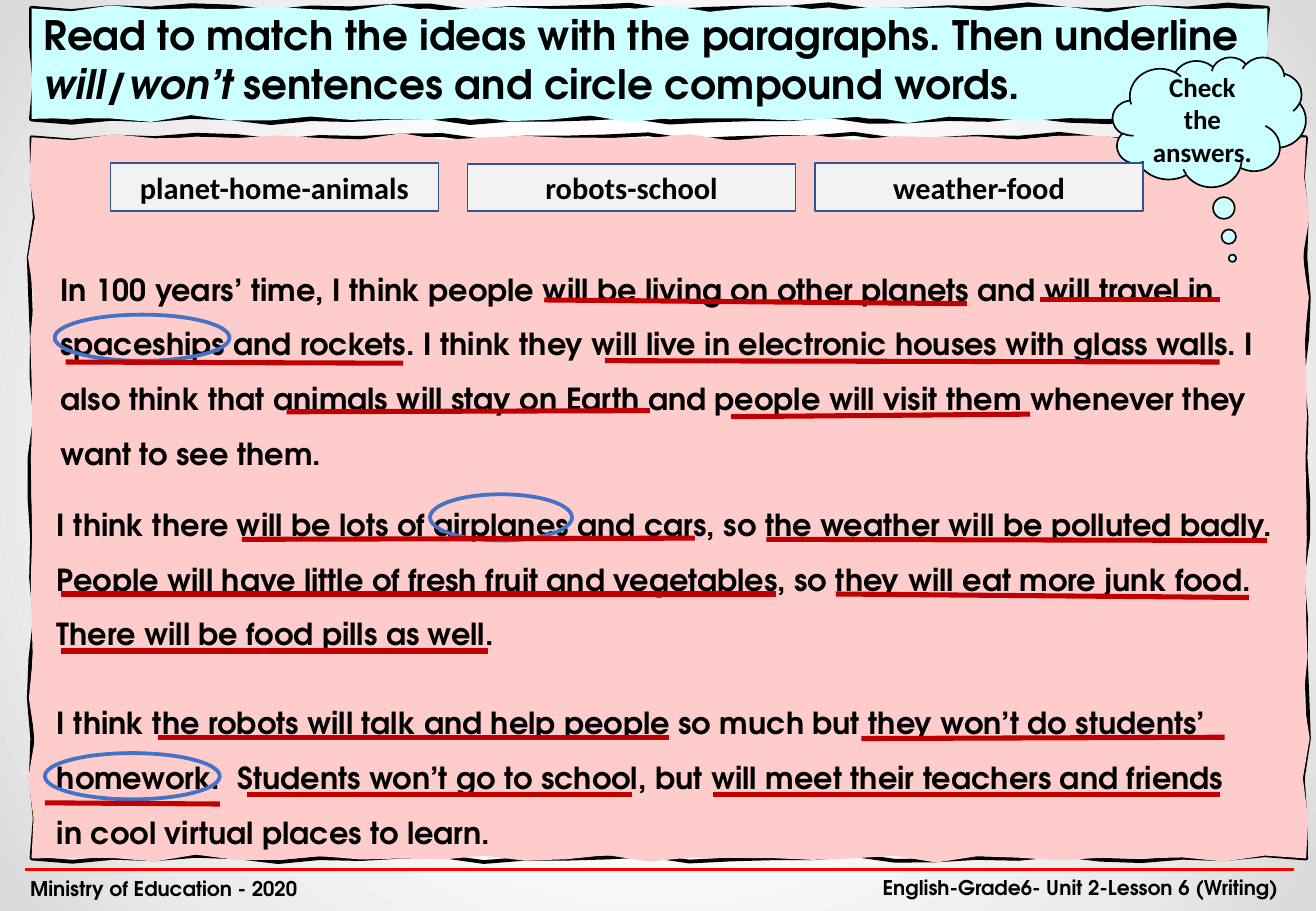
from dataclasses import dataclass
from itertools import pairwise
from math import hypot, pi, sin

from lxml.etree import SubElement
from pptx import Presentation
from pptx.dml.color import RGBColor
from pptx.enum.shapes import MSO_CONNECTOR, MSO_SHAPE
from pptx.enum.text import MSO_ANCHOR, PP_ALIGN
from pptx.oxml import parse_xml
from pptx.oxml.ns import nsdecls, qn
from pptx.util import Pt

COLORS = {
    "ink": "000000", "panel": "FFCCCC", "header": "CCFFFF", "label": "F2F2F2",
    "label_edge": "325491", "circle": "4472C4", "underline": "C00000", "rule": "FF0000",
}
BACKDROP = ((0, "F2F2F2"), (39, "FFFFFF"), (78, "ECECEC"), (100, "D9D9D9"))
BODY_FONT = "TeX Gyre Adventor"
LABEL_FONT = "Calibri"


@dataclass(frozen=True)
class Box:
    x: float
    y: float
    w: float
    h: float

    def emu(self):
        return Pt(self.x), Pt(self.y), Pt(self.w), Pt(self.h)


@dataclass(frozen=True)
class Stroke:
    x1: float
    y1: float
    x2: float
    y2: float


@dataclass(frozen=True)
class Passage:
    box: Box
    text: str


PANEL = Box(18.7, 81.4, 755.5, 427.5)
HEADER = Box(18.7, 5, 732.5, 65.5)
PASSAGES = (
    Passage(Box(28.8, 146.2, 722.2, 138.2),
            "In 100 years’ time, I think people will be living on other planets and will travel in "
            "spaceships and rockets. I think they will live in electronic houses with glass walls. "
            "I also think that animals will stay on Earth and people will visit them whenever they "
            "want to see them."),
    Passage(Box(26.6, 285.8, 740.2, 105.1),
            "I think there will be lots of airplanes and cars, so the weather will be polluted "
            "badly. People will have little of fresh fruit and vegetables, so they will eat more "
            "junk food. There will be food pills as well."),
    Passage(Box(26.6, 403.2, 713.5, 105.1),
            "I think the robots will talk and help people so much but they won’t do students’ "
            "homework.  Students won’t go to school, but will meet their teachers and friends in "
            "cool virtual places to learn."),
)
CIRCLES = (Box(32.4, 186.5, 103.7, 27.4), Box(254.9, 293, 84.2, 27.4), Box(26.6, 446.4, 103.7, 27.4))
UNDERLINES = (
    Stroke(322.6, 177.8, 573.1, 180), Stroke(616.3, 177.8, 722.9, 177.8),
    Stroke(38.9, 214.6, 239, 215.3), Stroke(358.6, 213.8, 722.9, 214.6),
    Stroke(169.9, 244.1, 385.2, 243.4), Stroke(433.4, 247, 610.6, 245.5),
    Stroke(143.3, 319.7, 411.8, 319), Stroke(454.3, 319.7, 751, 320.4),
    Stroke(36, 352.1, 460.1, 352.1), Stroke(495.4, 352.1, 740.2, 354.2),
    Stroke(36, 385.9, 289.4, 385.9),
    Stroke(93.6, 437, 396.7, 437), Stroke(510.5, 437.8, 725.8, 437),
    Stroke(26.6, 475.9, 130.3, 476.6), Stroke(146.2, 470.9, 374.4, 470.9),
    Stroke(422.6, 470.9, 722.9, 470.9),
)
LABELS = (
    Passage(Box(65.5, 96.5, 194.4, 28.8), "planet-home-animals"),
    Passage(Box(277.2, 97.2, 194.4, 28.1), "robots-school"),
    Passage(Box(483.1, 96.5, 194.4, 28.8), "weather-food"),
)


def rgb(name: str) -> RGBColor:
    return RGBColor.from_string(COLORS[name])


def paint(sp, fill: str | None = None, line: str | None = None, width: float = 1) -> None:
    sp.shadow.inherit = False
    if fill:
        sp.fill.solid()
        sp.fill.fore_color.rgb = rgb(fill)
    else:
        sp.fill.background()
    if line:
        sp.line.color.rgb = rgb(line)
        sp.line.width = Pt(width)
    else:
        sp.line.fill.background()


def write(sp, *runs: str, size: float, font: str = BODY_FONT, align=PP_ALIGN.LEFT,
          anchor=MSO_ANCHOR.TOP, spacing: float = 1, wrap: bool = True,
          italic_run: int | None = None) -> None:
    tf = sp.text_frame
    tf.word_wrap = wrap
    tf.vertical_anchor = anchor
    p = tf.paragraphs[0]
    p.alignment = align
    p.line_spacing = spacing
    for i, text in enumerate(runs):
        r = p.add_run()
        r.text = text
        r.font.name = font
        r.font.size = Pt(size)
        r.font.bold = True
        r.font.italic = i == italic_run
        r.font.color.rgb = rgb("ink")


def add_text(slide, box: Box, text: str, **fmt) -> None:
    write(slide.shapes.add_textbox(*box.emu()), text, **fmt)


def add_line(slide, s: Stroke, color: str, width: float) -> None:
    ends = (Pt(v) for v in (s.x1, s.y1, s.x2, s.y2))
    cxn = slide.shapes.add_connector(MSO_CONNECTOR.STRAIGHT, *ends)
    cxn.line.color.rgb = rgb(color)
    cxn.line.width = Pt(width)
    SubElement(cxn._element.spPr, qn("a:effectLst"))


def add_shape(slide, kind, box: Box, **look):
    sp = slide.shapes.add_shape(kind, *box.emu())
    paint(sp, **look)
    return sp


def wavy_points(box: Box, shift: int, sway: float = 1.2, step: float = 24) -> list[tuple[int, int]]:
    right, bottom = box.x + box.w, box.y + box.h
    corners = ((box.x, box.y), (right, box.y), (right, bottom), (box.x, bottom), (box.x, box.y))
    points = []
    for (x1, y1), (x2, y2) in pairwise(corners):
        length = hypot(x2 - x1, y2 - y1)
        waves, steps = round(length / 31) + shift, round(length / step)
        for i in range(steps):
            u = i / steps
            off = sway * (sin(waves * pi * u) + sin((waves // 2 + 3 * shift) * pi * u))
            x = x1 + (x2 - x1) * u - (y2 - y1) / length * off
            y = y1 + (y2 - y1) * u + (x2 - x1) / length * off
            points.append((Pt(x), Pt(y)))
    return points


def add_wavy_panel(slide, box: Box, fill: str, width: float):
    for shift, look in ((0, {"line": "ink", "width": width}), (2, {"fill": fill})):
        first, *rest = wavy_points(box, shift)
        builder = slide.shapes.build_freeform(*first, scale=1.0)
        builder.add_line_segments(rest, close=True)
        sp = builder.convert_to_shape()
        paint(sp, **look)
    return sp


def set_backdrop(slide) -> None:
    slide.background.fill.gradient()
    old = slide.element.find(".//" + qn("a:gradFill"))
    stops = "".join(f'<a:gs pos="{pos * 1000}"><a:srgbClr val="{c}"/></a:gs>' for pos, c in BACKDROP)
    old.getparent().replace(old, parse_xml(
        f'<a:gradFill {nsdecls("a")} rotWithShape="1"><a:gsLst>{stops}</a:gsLst><a:path path="circle">'
        '<a:fillToRect l="50000" t="50000" r="50000" b="50000"/></a:path></a:gradFill>'))


def main() -> None:
    prs = Presentation()
    prs.slide_width, prs.slide_height = Pt(780), Pt(540)
    slide = prs.slides.add_slide(prs.slide_layouts[6])
    set_backdrop(slide)
    add_line(slide, Stroke(15.1, 515.5, 766.8, 515.5), "rule", 1.5)
    add_wavy_panel(slide, PANEL, "panel", 2.25)
    for passage in PASSAGES:
        add_text(slide, passage.box, passage.text, size=18, spacing=1.5)
    header = add_wavy_panel(slide, HEADER, "header", 3)
    write(header, "Read to match the ideas with the paragraphs. Then underline ", "will/won’t",
          " sentences and circle compound words.", size=24, italic_run=1)
    for box in CIRCLES:
        add_shape(slide, MSO_SHAPE.OVAL, box, line="circle", width=2.25)
    centred = {"font": LABEL_FONT, "align": PP_ALIGN.CENTER, "anchor": MSO_ANCHOR.MIDDLE}
    cloud = add_shape(slide, MSO_SHAPE.CLOUD_CALLOUT, Box(659.5, 33.8, 114.5, 77),
                      fill="header", line="ink")
    cloud.adjustments[0], cloud.adjustments[1] = 0.12, 1.05
    write(cloud, "Check the answers.", size=16, **centred)
    for stroke in UNDERLINES:
        add_line(slide, stroke, "underline", 3)
    for label in LABELS:
        sp = add_shape(slide, MSO_SHAPE.RECTANGLE, label.box, fill="label", line="label_edge")
        write(sp, label.text, size=18, **centred)
    add_text(slide, Box(511.2, 515.5, 258.5, 21.6), "English-Grade6- Unit 2-Lesson 6 (Writing)",
             size=12, align=PP_ALIGN.CENTER, anchor=MSO_ANCHOR.MIDDLE)
    add_text(slide, Box(10.8, 516.2, 174.2, 21.6), "Ministry of Education - 2020", size=12, wrap=False)
    prs.save("out.pptx")


if __name__ == "__main__":
    main()
